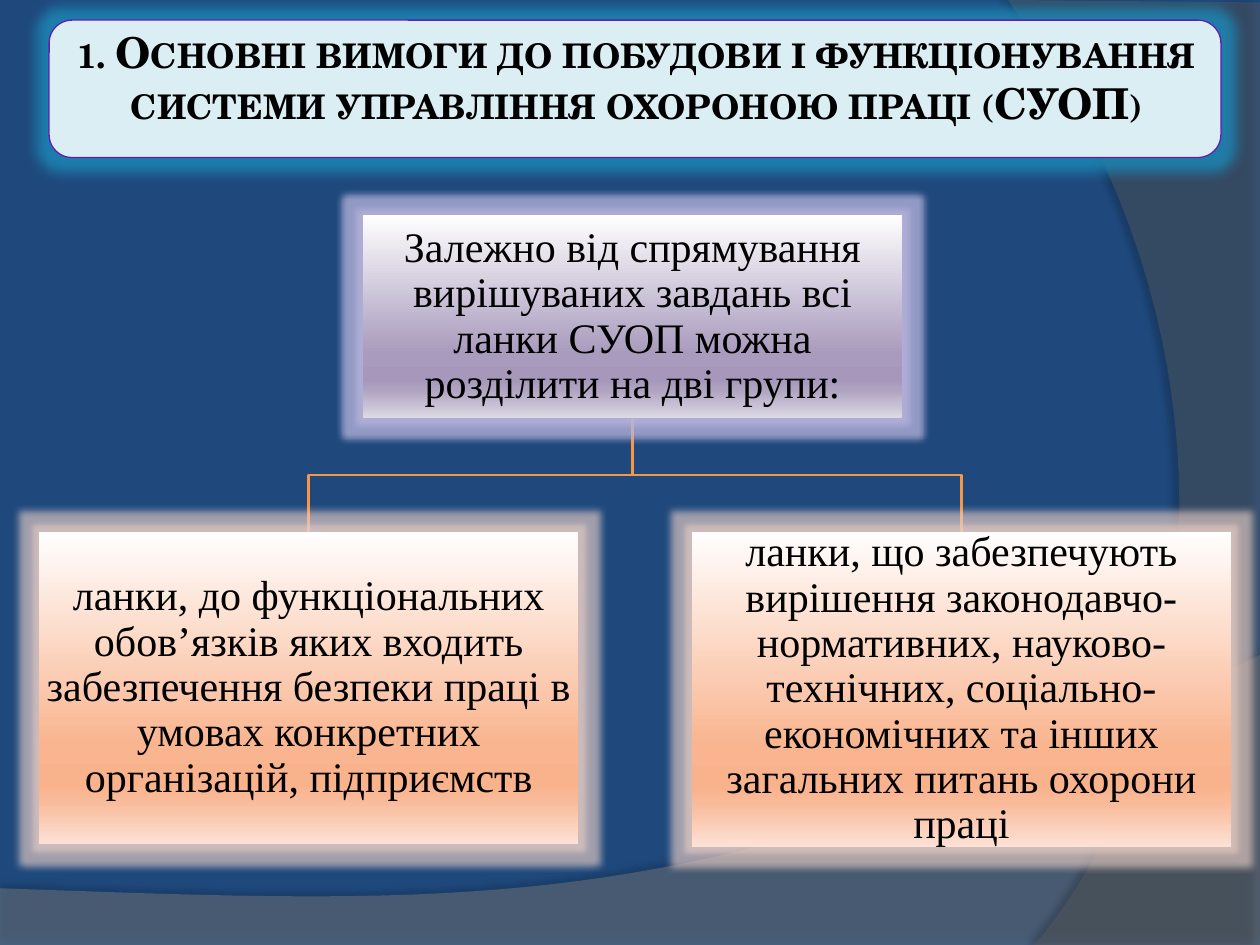
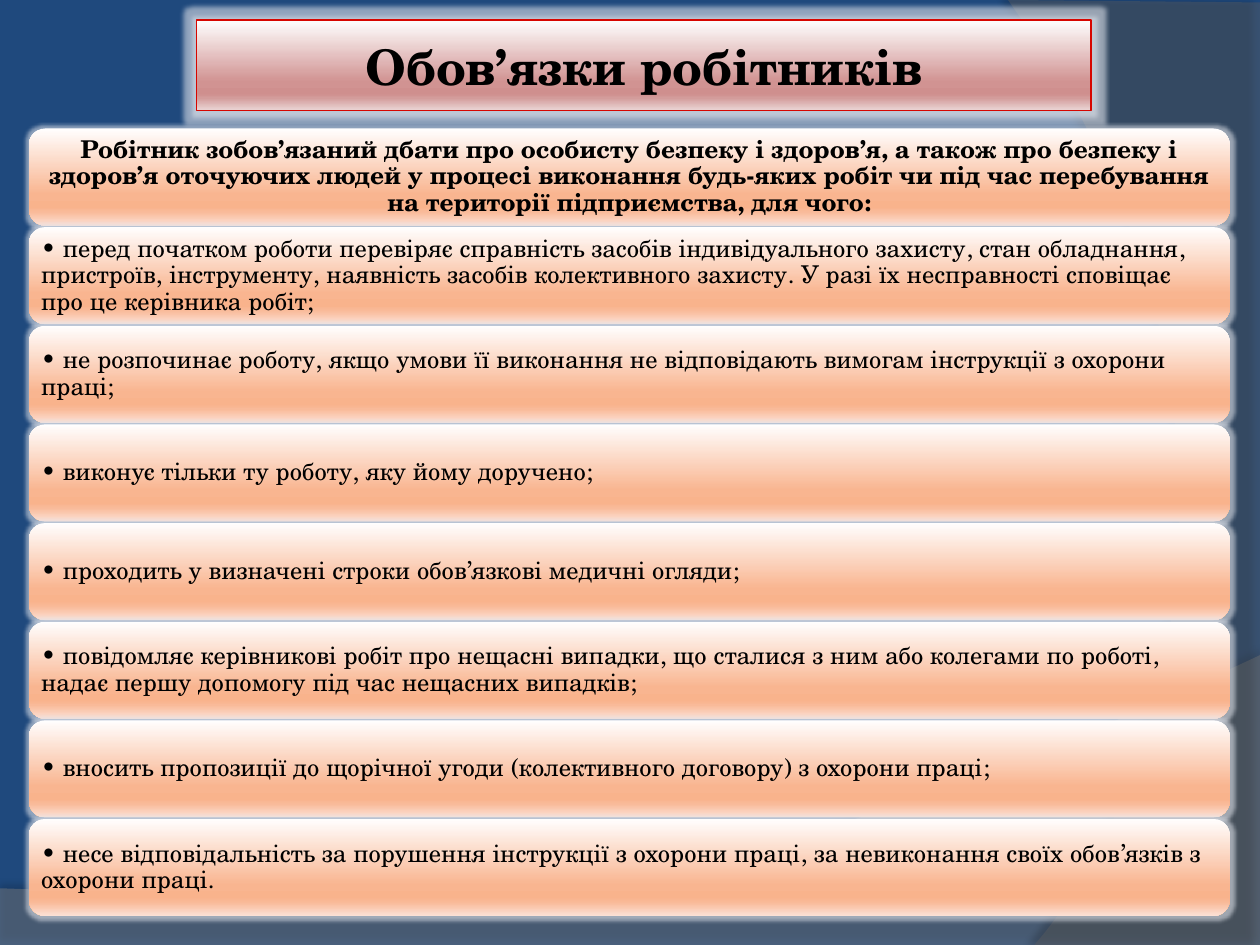
from dataclasses import dataclass
from typing import Optional

import pptx
import pptx.dml.color
import pptx.enum.shapes
import pptx.enum.text
import pptx.oxml
import pptx.oxml.ns
import pptx.util
from pptx.dml.color import RGBColor
from pptx.util import Inches

SHAPE = pptx.enum.shapes.MSO_SHAPE
ALIGN = pptx.enum.text.PP_ALIGN
NS = pptx.oxml.ns.nsdecls("a")

NAVY = RGBColor(0x1F, 0x49, 0x7D)
GREY = RGBColor(0x7F, 0x7F, 0x7F)
DARK_GREY = RGBColor(0x5E, 0x5E, 0x5E)
BLACK = RGBColor(0x00, 0x00, 0x00)
ICE = RGBColor(0xDB, 0xEE, 0xF4)
VIOLET = RGBColor(0x62, 0x1E, 0xB3)
RED = RGBColor(0xD7, 0x06, 0x00)
ORANGE = RGBColor(0xF7, 0x96, 0x46)
TEAL_GLOW = RGBColor(0x1C, 0x86, 0xB4)
LILAC_GLOW = RGBColor(0xB8, 0xB4, 0xDC)
PEACH_GLOW = RGBColor(0xE6, 0xCC, 0xC4)
PALE_GLOW = RGBColor(0xDC, 0xE0, 0xE8)

GRADIENT_STOPS = (0, 68, 81, 86, 100)
LILAC = ("FEFEFE", "A99BBD", "A697BB", "AFA3C1", "DDD9E4")
PEACH = ("FFFEFE", "F9B590", "F9B38C", "F9BA99", "FCE1D6")
ROSE = ("FEFEFE", "D19392", "CF8F8E", "D39C9B", "EBD7D7")

SERIF = "TeX Gyre Schola"
TIMES = "Times New Roman"


@dataclass(frozen=True)
class Glow:
    color: RGBColor
    radius: float
    alpha: int


@dataclass(frozen=True)
class TextStyle:
    font: str
    size: float
    bold: bool = False
    align: ALIGN = ALIGN.CENTER
    inset: float = 0.05
    spacing: float = 1.0
    small_caps: bool = False


@dataclass(frozen=True)
class Panel:
    left: float
    top: float
    width: float
    height: float
    fill: RGBColor | tuple
    glow: Glow
    kind: SHAPE = SHAPE.RECTANGLE
    line: Optional[RGBColor] = None
    text: str = ""
    style: Optional[TextStyle] = None


TITLE = TextStyle(SERIF, 24.3, bold=True, small_caps=True)
BANNER = TextStyle(SERIF, 28, bold=True)
NODE = TextStyle(TIMES, 24, inset=0.02, spacing=0.9)
ROW_HEAD = TextStyle(SERIF, 14, bold=True, inset=0.06, spacing=0.9)
ROW = TextStyle(SERIF, 14, align=ALIGN.LEFT, inset=0.06, spacing=0.9)

DUTIES = (
    "Робітник зобов’язаний дбати про особисту безпеку і здоров’я, а також про безпеку і здоров’я "
    "оточуючих людей у процесі виконання будь-яких робіт чи під час перебування на території "
    "підприємства, для чого:",
    "• перед початком роботи перевіряє справність засобів індивідуального захисту, стан обладнання, "
    "пристроїв, інструменту, наявність засобів колективного захисту. У разі їх несправності сповіщає "
    "про це керівника робіт;",
    "• не розпочинає роботу, якщо умови її виконання не відповідають вимогам інструкції з охорони праці;",
    "• виконує тільки ту роботу, яку йому доручено;",
    "• проходить у визначені строки обов’язкові медичні огляди;",
    "• повідомляє керівникові робіт про нещасні випадки, що сталися з ним або колегами по роботі, "
    "надає першу допомогу під час нещасних випадків;",
    "• вносить пропозиції до щорічної угоди (колективного договору) з охорони праці;",
    "• несе відповідальність за порушення інструкції з охорони праці, за невиконання своїх обов’язків "
    "з охорони праці.",
)


def color_xml(color, alpha: int = 100) -> str:
    return f'<a:srgbClr val="{color}"><a:alpha val="{alpha * 1000}"/></a:srgbClr>'


def set_effect(sp, effect: str) -> None:
    sp.shadow.inherit = False
    effects = sp._element.spPr.find(pptx.oxml.ns.qn("a:effectLst"))
    effects.append(pptx.oxml.parse_xml(effect))


def set_gradient(sp, colors: tuple) -> None:
    sp.fill.gradient()
    sp.fill.gradient_angle = 270
    stops = sp._element.spPr.find(".//" + pptx.oxml.ns.qn("a:gsLst"))
    for stop in list(stops):
        stops.remove(stop)
    for pos, color in zip(GRADIENT_STOPS, colors):
        stops.append(pptx.oxml.parse_xml(f'<a:gs {NS} pos="{pos * 1000}">{color_xml(color)}</a:gs>'))


def write_text(sp, text: str, style: TextStyle) -> None:
    tf = sp.text_frame
    inset = Inches(style.inset)
    frame = dict(word_wrap=True, vertical_anchor=pptx.enum.text.MSO_ANCHOR.MIDDLE,
                 margin_left=inset, margin_right=inset, margin_top=inset, margin_bottom=inset)
    for name, value in frame.items():
        setattr(tf, name, value)
    p = tf.paragraphs[0]
    p.alignment, p.line_spacing = style.align, style.spacing
    r = p.add_run()
    r.text = text
    for name, value in dict(name=style.font, size=pptx.util.Pt(style.size), bold=style.bold).items():
        setattr(r.font, name, value)
    r.font.color.rgb = BLACK
    if style.small_caps:
        r._r.get_or_add_rPr().set("cap", "small")


def add_panel(s, panel: Panel) -> None:
    box = map(Inches, (panel.left, panel.top, panel.width, panel.height))
    sp = s.shapes.add_shape(panel.kind, *box)
    if isinstance(panel.fill, RGBColor):
        sp.fill.solid()
        sp.fill.fore_color.rgb = panel.fill
    else:
        set_gradient(sp, panel.fill)
    if panel.line is None:
        sp.line.fill.background()
    else:
        sp.line.color.rgb = panel.line
        sp.line.width = pptx.util.Pt(0.75)
    glow = panel.glow
    set_effect(sp, f'<a:glow {NS} rad="{pptx.util.Pt(glow.radius)}">'
                   f'{color_xml(glow.color, glow.alpha)}</a:glow>')
    if panel.style:
        write_text(sp, panel.text, panel.style)


def bezier(*controls: tuple, steps: int = 40) -> list:
    """Points along a cubic curve given by its four control points."""
    def point(t: float) -> tuple:
        weights = ((1 - t) ** 3, 3 * t * (1 - t) ** 2, 3 * t * t * (1 - t), t ** 3)
        return tuple(sum(w * c[axis] for w, c in zip(weights, controls)) for axis in (0, 1))
    return [point(i / steps) for i in range(steps + 1)]


def add_outline(s, points: list, close: bool):
    scaled = [(Inches(x), Inches(y)) for x, y in points]
    builder = s.shapes.build_freeform(*scaled[0])
    builder.add_line_segments(scaled[1:], close=close)
    return builder.convert_to_shape()


def add_wave(s, points: list, color: RGBColor, alpha: int, shadow_alpha: int,
             distance: float, angle: int) -> None:
    sp = add_outline(s, points, close=True)
    sp.fill.solid()
    sp.fill.fore_color.rgb = color
    tint = sp._element.spPr.find(".//" + pptx.oxml.ns.qn("a:srgbClr"))
    tint.append(pptx.oxml.parse_xml(f'<a:alpha {NS} val="{alpha * 1000}"/>'))
    sp.line.fill.background()
    set_effect(sp, f'<a:outerShdw {NS} blurRad="{pptx.util.Pt(4)}" dist="{pptx.util.Pt(distance)}" '
                   f'dir="{angle * 60000}" algn="ctr" rotWithShape="0">'
                   f'{color_xml(BLACK, shadow_alpha)}</a:outerShdw>')


def add_base_slide(prs):
    """Blank slide with the navy background and two translucent waves."""
    s = prs.slides.add_slide(prs.slide_layouts[6])
    s.background.fill.solid()
    s.background.fill.fore_color.rgb = NAVY
    bottom = [(0, 7.5), (10, 7.5)] + bezier((10, 5.2), (5.59, 7.29), (3.91, 7.19), (0, 7.05))
    side = [(10, 0.02), (10, 7.5)] + bezier((8.21, 7.5), (9.35, 6.19), (10.18, 3), (8, 0))
    add_wave(s, bottom, GREY, 45, 35, 3.5, 270)
    add_wave(s, side, DARK_GREY, 40, 45, 4, 180)
    return s


def add_structure_slide(prs) -> None:
    s = add_base_slide(prs)
    add_panel(s, Panel(0.39, 0.16, 9.3, 1.09, ICE, Glow(TEAL_GLOW, 14, 85),
                       SHAPE.ROUNDED_RECTANGLE, VIOLET))
    title = s.shapes.add_textbox(*map(Inches, (0.5, 0.16, 9.11, 0.9)))
    write_text(title, "1. Основні вимоги до побудови і функціонування системи управління "
                      "охороною праці (СУОП)", TITLE)

    width, root_bottom, branch_top = 4.28, 3.32, 4.22
    root_x, middle = 5.02, (root_bottom + branch_top) / 2
    branches = (
        (0.31, 2.48, "ланки, до функціональних обов’язків яких входить забезпечення безпеки праці "
                     "в умовах конкретних організацій, підприємств"),
        (5.49, 2.5, "ланки, що забезпечують вирішення законодавчо-нормативних, науково-технічних, "
                    "соціально-економічних та інших загальних питань охорони праці"),
    )
    for left, _, _ in branches:
        x = left + width / 2
        sp = add_outline(s, [(root_x, root_bottom), (root_x, middle), (x, middle), (x, branch_top)],
                         close=False)
        sp.fill.background()
        sp.line.color.rgb = ORANGE
        sp.line.width = pptx.util.Pt(1.5)
        sp.shadow.inherit = False

    add_panel(s, Panel(root_x - width / 2, 1.71, width, 1.61, LILAC, Glow(LILAC_GLOW, 8, 75),
                       text="Залежно від спрямування вирішуваних завдань всі ланки СУОП можна "
                            "розділити на дві групи:", style=NODE))
    for left, height, text in branches:
        add_panel(s, Panel(left, branch_top, width, height, PEACH, Glow(PEACH_GLOW, 8, 65),
                           text=text, style=NODE))


def add_duties_slide(prs) -> None:
    s = add_base_slide(prs)
    glow = Glow(PALE_GLOW, 5, 60)
    add_panel(s, Panel(1.56, 0.16, 7.1, 0.72, ROSE, glow, line=RED,
                       text="Обов’язки робітників", style=BANNER))
    first_top, last_top = 1.02, 6.5
    pitch = (last_top - first_top) / (len(DUTIES) - 1)
    for i, text in enumerate(DUTIES):
        add_panel(s, Panel(0.23, first_top + i * pitch, 9.53, 0.77, PEACH, glow,
                           SHAPE.ROUNDED_RECTANGLE, text=text, style=ROW if i else ROW_HEAD))


def main() -> None:
    prs = pptx.Presentation()
    prs.slide_width, prs.slide_height = Inches(10), Inches(7.5)
    add_structure_slide(prs)
    add_duties_slide(prs)
    prs.save("out.pptx")


if __name__ == "__main__":
    main()
